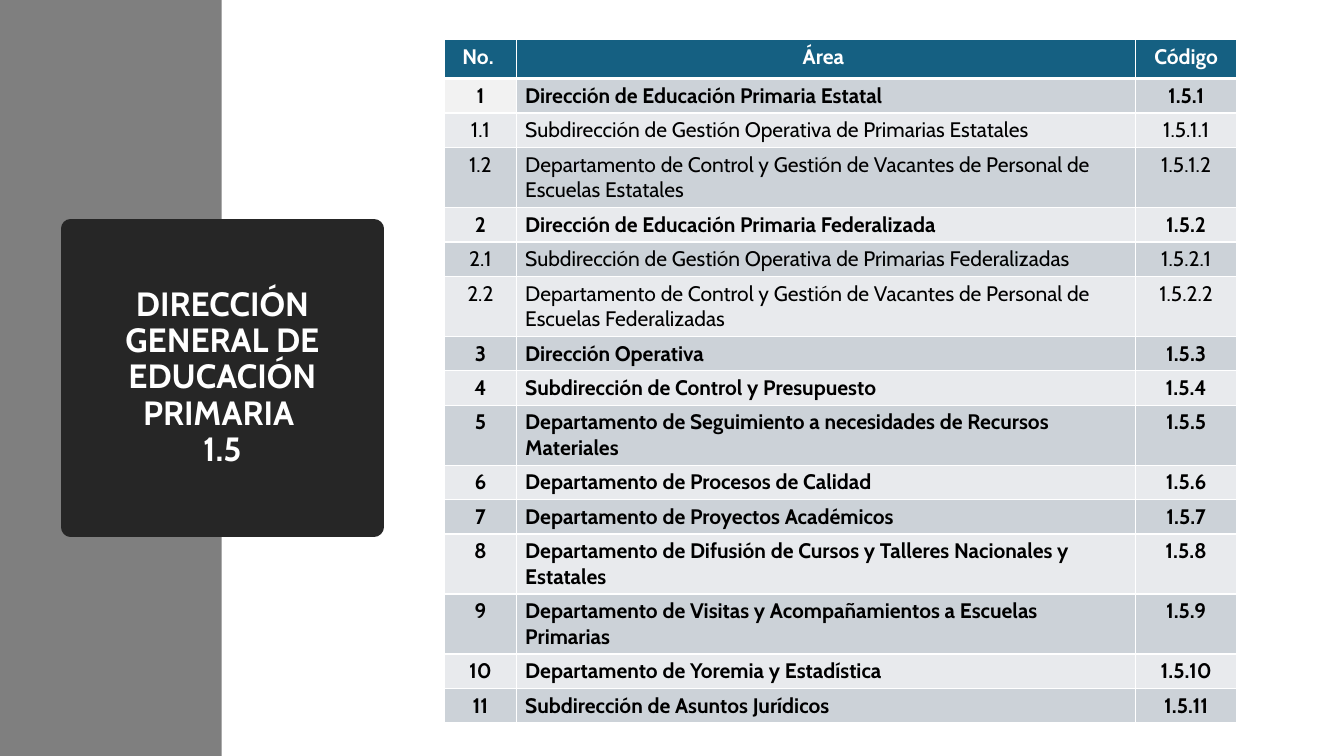
from lxml.etree import SubElement
from pptx import Presentation
from pptx.dml.color import RGBColor
from pptx.enum.shapes import MSO_SHAPE
from pptx.enum.text import MSO_ANCHOR, PP_ALIGN
from pptx.oxml.ns import qn
from pptx.util import Inches, Pt

FONT = "Cabin"
COLORS = {
    "band": "7F7F7F", "title": "262626", "header": "156082", "white": "FFFFFF",
    "text": "000000", "odd": "CCD2D8", "even": "E8EAED", "first": "F2F2F2",
}
TITLE = ("DIRECCIÓN GENERAL DE EDUCACIÓN PRIMARIA ", "1.5")
HEADER = ("No. ", "Área ", "Código")
AREAS = [
    ("1", "Dirección de Educación Primaria Estatal"),
    ("1.1", "Subdirección de Gestión Operativa de Primarias Estatales"),
    ("1.2", "Departamento de Control y Gestión de Vacantes de Personal de Escuelas Estatales"),
    ("2", "Dirección de Educación Primaria Federalizada"),
    ("2.1", "Subdirección de Gestión Operativa de Primarias Federalizadas"),
    ("2.2", "Departamento de Control y Gestión de Vacantes de Personal de Escuelas Federalizadas"),
    ("3", "Dirección Operativa"),
    ("4", "Subdirección de Control y Presupuesto"),
    ("5", "Departamento de Seguimiento a necesidades de Recursos Materiales"),
    ("6", "Departamento de Procesos de Calidad"),
    ("7", "Departamento de Proyectos Académicos"),
    ("8", "Departamento de Difusión de Cursos y Talleres Nacionales y Estatales"),
    ("9", "Departamento de Visitas y Acompañamientos a Escuelas Primarias"),
    ("10", "Departamento de Yoremia y Estadística"),
    ("11", "Subdirección de Asuntos Jurídicos"),
]
COLUMN_WIDTHS = (0.71, 6.14, 1.01)
HEADER_HEIGHT, ROW_HEIGHT = 0.39, 0.3


def color(name):
    return RGBColor.from_string(COLORS[name])


def add_block(page, left, top, width, height, fill):
    block = page.shapes.add_shape(MSO_SHAPE.RECTANGLE, Inches(left), Inches(top),
                                  Inches(width), Inches(height))
    block.shadow.inherit = False
    block.fill.solid()
    block.fill.fore_color.rgb = color(fill)
    block.line.fill.background()
    return block


def add_span(para, text, size, ink, bold):
    span = para.add_run()
    span.text = text
    span.font.name = FONT
    span.font.size = Pt(size)
    span.font.bold = bold
    span.font.color.rgb = color(ink)


def add_title(page):
    box = add_block(page, 0.7, 2.27, 3.01, 2.96, "title")
    box.line.color.rgb = color("title")
    box.line.width = Pt(13.75)
    box.text_frame.word_wrap = True
    box.text_frame.vertical_anchor = MSO_ANCHOR.MIDDLE
    para = box.text_frame.paragraphs[0]
    para.alignment = PP_ALIGN.CENTER
    para.line_spacing = 0.9
    name, code = TITLE
    add_span(para, name, 24, "white", True)
    para.add_line_break()
    add_span(para, code, 24, "white", True)


def add_borders(cell, bottom):
    """Draw white cell edges, 1 pt wide except for the given bottom width."""
    properties = cell._tc.get_or_add_tcPr()
    for side, width in (("L", 1), ("R", 1), ("T", 1), ("B", bottom)):
        edge = SubElement(properties, qn(f"a:ln{side}"), w=str(Pt(width)))
        paint = SubElement(edge, qn("a:solidFill"))
        SubElement(paint, qn("a:srgbClr"), val=COLORS["white"])


def fill_cell(cell, text, fill, ink, bold, align, bottom=1):
    add_borders(cell, bottom)
    cell.fill.solid()
    cell.fill.fore_color.rgb = color(fill)
    cell.margin_left = cell.margin_right = Inches(0.09)
    cell.margin_top = cell.margin_bottom = Pt(3.2)
    para = cell.text_frame.paragraphs[0]
    para.alignment = align
    add_span(para, text, 15, ink, bold)


def add_areas(page):
    height = HEADER_HEIGHT + ROW_HEIGHT * len(AREAS)
    table = page.shapes.add_table(len(AREAS) + 1, len(HEADER), Inches(4.41), Inches(0.39),
                                  Inches(sum(COLUMN_WIDTHS)), Inches(height)).table
    for column, width in zip(table.columns, COLUMN_WIDTHS):
        column.width = Inches(width)
    for row in table.rows:
        row.height = Inches(ROW_HEIGHT)
    table.rows[0].height = Inches(HEADER_HEIGHT)

    for column, label in enumerate(HEADER):
        fill_cell(table.cell(0, column), label, "header", "white", True,
                  PP_ALIGN.CENTER, bottom=3)
    for row, (number, area) in enumerate(AREAS, start=1):
        bold = "." not in number
        band = "odd" if row % 2 else "even"
        for column, text in enumerate((number, area, f"{TITLE[1]}.{number}")):
            fill = "first" if (row, column) == (1, 0) else band
            align = PP_ALIGN.LEFT if column == 1 else PP_ALIGN.CENTER
            fill_cell(table.cell(row, column), text, fill, "text", bold, align)


def main():
    deck = Presentation()
    deck.slide_width, deck.slide_height = Inches(13.33), Inches(7.5)
    page = deck.slides.add_slide(deck.slide_layouts[6])
    add_block(page, 0, 0, 2.2, 7.5, "band")
    add_title(page)
    add_areas(page)
    deck.save("out.pptx")


if __name__ == "__main__":
    main()
